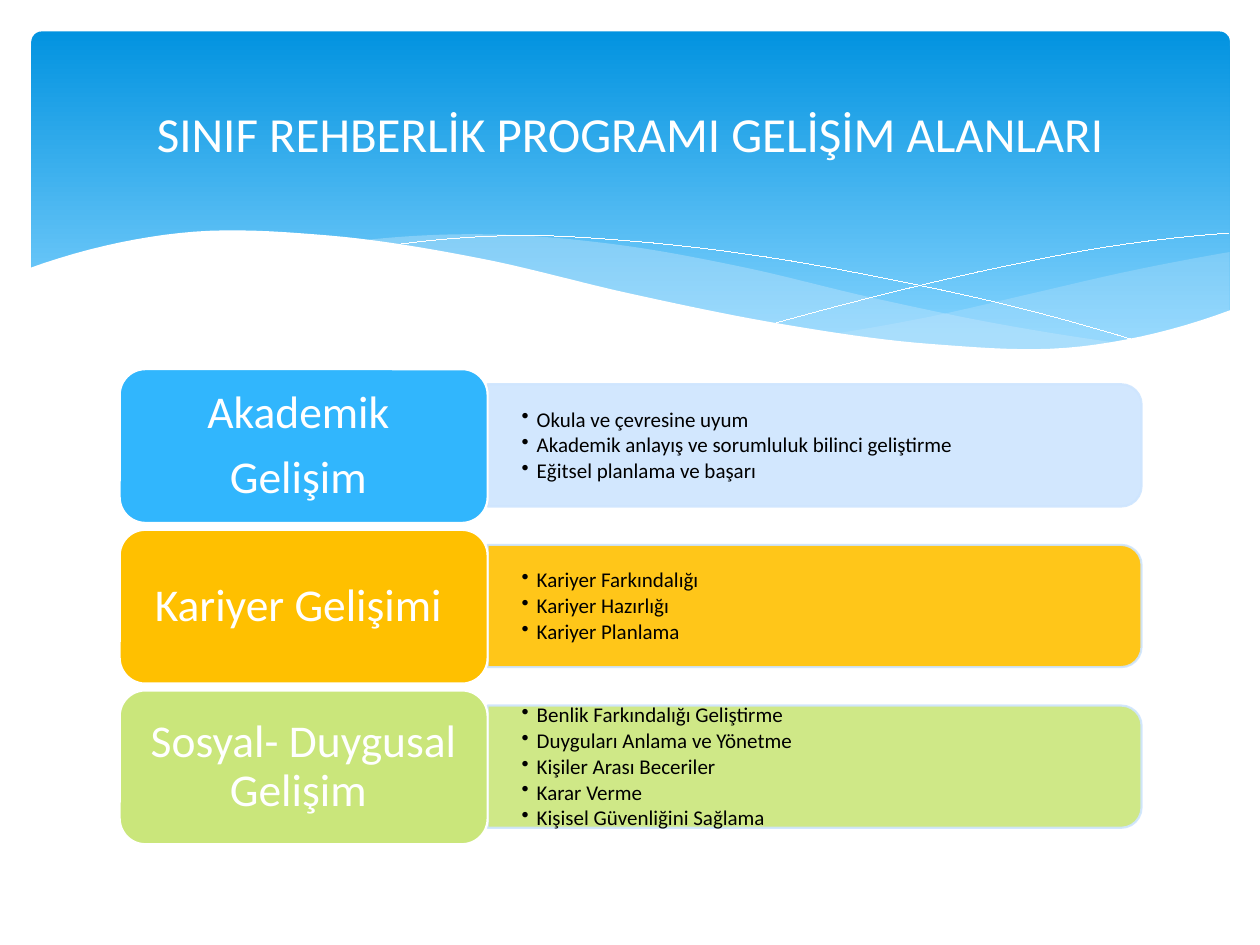
import pptx
import pptx.util
import pptx.dml.color
import pptx.enum.shapes
import pptx.enum.text
import pptx.oxml.ns
import lxml.etree

Inches = pptx.util.Inches
Pt = pptx.util.Pt
kind = pptx.enum.shapes.MSO_SHAPE
align = pptx.enum.text.PP_ALIGN
qn = pptx.oxml.ns.qn


def paint(color, code, alpha=100):
    color.rgb = pptx.dml.color.RGBColor.from_string(code)
    return str(alpha * 1000)


def curve(left, right, knots, steps=10):
    first = 3 * knots[0] - 3 * knots[1] + knots[2]
    last = 3 * knots[-1] - 3 * knots[-2] + knots[-3]
    ends = [first, *knots, last]
    count = (len(knots) - 1) * steps
    dots = []
    for n in range(count + 1):
        i = min(n // steps, len(knots) - 2)
        t = n / steps - i
        a, b, c, d = ends[i:i + 4]
        y = b + t * (c - a) / 2 + t**2 * (a - 2.5 * b + 2 * c - d / 2) + t**3 * (1.5 * (b - c) + (d - a) / 2)
        dots.append((Inches(left + (right - left) * n / count), Inches(y)))
    return dots


deck = pptx.Presentation()
deck.slide_width = Inches(10)
deck.slide_height = Inches(7.5)
slide = deck.slides.add_slide(deck.slide_layouts[6])
shapes = slide.shapes

banner = shapes.add_shape(kind.ROUNDED_RECTANGLE, Inches(0.25), Inches(0.25), Inches(9.51), Inches(2.7))
banner.adjustments[0] = 0.03
banner.shadow.inherit = False
banner.line.fill.background()
banner.fill.gradient()
banner.fill.gradient_angle = 270
for stop, (place, code) in zip(banner.fill.gradient_stops, [(0, "0293E0"), (0.9, "83D3FE")]):
    stop.position = place
    paint(stop.color, code)

right_top = [2.65, 2.51, 2.33, 2.15, 2]
right_base = [2.65, 2.75, 2.78, 2.7, 2.47]
mid_top = [1.91, 1.86, 1.94, 2.12, 2.36, 2.57, 2.73]
mid_base = [1.91, 2.08, 2.31, 2.53, 2.69, 2.78, 2.73]
fall = [1.95, 1.87, 1.92, 2.04, 2.22, 2.44, 2.72]
rise = [2.57, 2.33, 2.12, 1.95, 1.85]
front_top = [2.13, 1.85, 1.87, 2.05, 2.33, 2.57, 2.73, 2.75, 2.46]
front_base = [3.29] * 3
waves = [
    (6.61, 9.76, right_top, right_base, "C6E7FC", 29),
    (2.86, 8.93, mid_top, mid_base, "C6E7FC", 40),
    (3.09, 9.07, fall, None, "FFFFFF", 100),
    (6.13, 9.75, rise, None, "FFFFFF", 100),
    (0.23, 9.77, front_top, front_base, "FFFFFF", 100)]
for left, right, crest, base, code, alpha in waves:
    dots = curve(left, right, crest)
    if base:
        dots += reversed(curve(left, right, base))
    path = shapes.build_freeform(*dots[0])
    path.add_line_segments(dots[1:], close=bool(base))
    wave = path.convert_to_shape()
    wave.shadow.inherit = False
    if base:
        wave.line.fill.background()
        wave.fill.solid()
        clear = paint(wave.fill.fore_color, code, alpha)
        for tone in list(wave._element.spPr.iter(qn("a:srgbClr"))):
            lxml.etree.SubElement(tone, qn("a:alpha"), val=clear)
    else:
        wave.fill.background()
        paint(wave.line.color, code)
        wave.line.width = Pt(0.01)

rows = [
    (["Akademik ", "Gelişim "], "31B6FD", "CEE5FE",
     ["Okula ve çevresine uyum", "Akademik anlayış ve sorumluluk bilinci geliştirme",
      "Eğitsel planlama ve başarı"]),
    (["Kariyer Gelişimi "], "FFC000", "FFC000",
     ["Kariyer Farkındalığı", "Kariyer Hazırlığı", "Kariyer Planlama"]),
    (["Sosyal- Duygusal Gelişim "], "CAE67B", "CAE67B",
     ["Benlik Farkındalığı Geliştirme", "Duyguları Anlama ve Yönetme",
      "Kişiler Arası Beceriler", "Karar Verme", "Kişisel Güvenliğini Sağlama"])]
first_top, pitch = 2.93, 1.275
texts = []
for i, (name, dark, light, items) in enumerate(rows):
    top = first_top + i * pitch
    bar = shapes.add_shape(kind.ROUND_2_SAME_RECTANGLE, Inches(5.98), Inches(top - 1.99), Inches(0.97), Inches(5.19))
    bar.rotation = 90
    notes = shapes.add_textbox(Inches(3.87), Inches(top + 0.17), Inches(5.14), Inches(0.88))
    card = shapes.add_shape(kind.ROUNDED_RECTANGLE, Inches(0.95), Inches(top), Inches(2.92), Inches(1.22))
    for shape, code, edge, alpha in [(bar, light, "CEE5FE", 90), (card, dark, "FFFFFF", 100)]:
        shape.shadow.inherit = False
        shape.fill.solid()
        clear = paint(shape.fill.fore_color, code, alpha)
        paint(shape.line.color, edge)
        shape.line.width = Pt(1.25)
        for tone in list(shape._element.spPr.iter(qn("a:srgbClr"))):
            lxml.etree.SubElement(tone, qn("a:alpha"), val=clear)
    texts.append((notes, items, 12, "000000", align.LEFT, 0.9, 1.8, (0.27, 0.14), True))
    texts.append((card, name, 26, "FFFFFF", align.CENTER, 0.9, 9.1, (0.11, 0.05), False))

title = shapes.add_textbox(Inches(0.5), Inches(0.37), Inches(9), Inches(1.37))
head = ["SINIF REHBERLİK PROGRAMI GELİŞİM ALANLARI"]
texts.append((title, head, 28, "FFFFFF", align.CENTER, 1.0, 0, (0.1, 0.05), False))

for shape, lines, size, code, side, space, gap, inset, listed in texts:
    frame = shape.text_frame
    frame.word_wrap = True
    frame.vertical_anchor = pptx.enum.text.MSO_ANCHOR.MIDDLE
    frame.margin_left = frame.margin_right = Inches(inset[0])
    frame.margin_top = frame.margin_bottom = Inches(inset[1])
    frame.text = "\n".join(lines)
    for para in frame.paragraphs:
        para.alignment = side
        para.line_spacing = space
        para.space_after = Pt(gap)
        for run in para.runs:
            run.font.size = Pt(size)
            run.font.name = "Calibri"
            paint(run.font.color, code)
        if listed:
            props = para._p.get_or_add_pPr()
            props.set("marL", str(Inches(0.12)))
            props.set("indent", str(Inches(-0.12)))
            lxml.etree.SubElement(props, qn("a:buChar"), char="•")
            lxml.etree.SubElement(para._p, qn("a:endParaRPr"), sz=str(size * 100))

deck.save("out.pptx")
